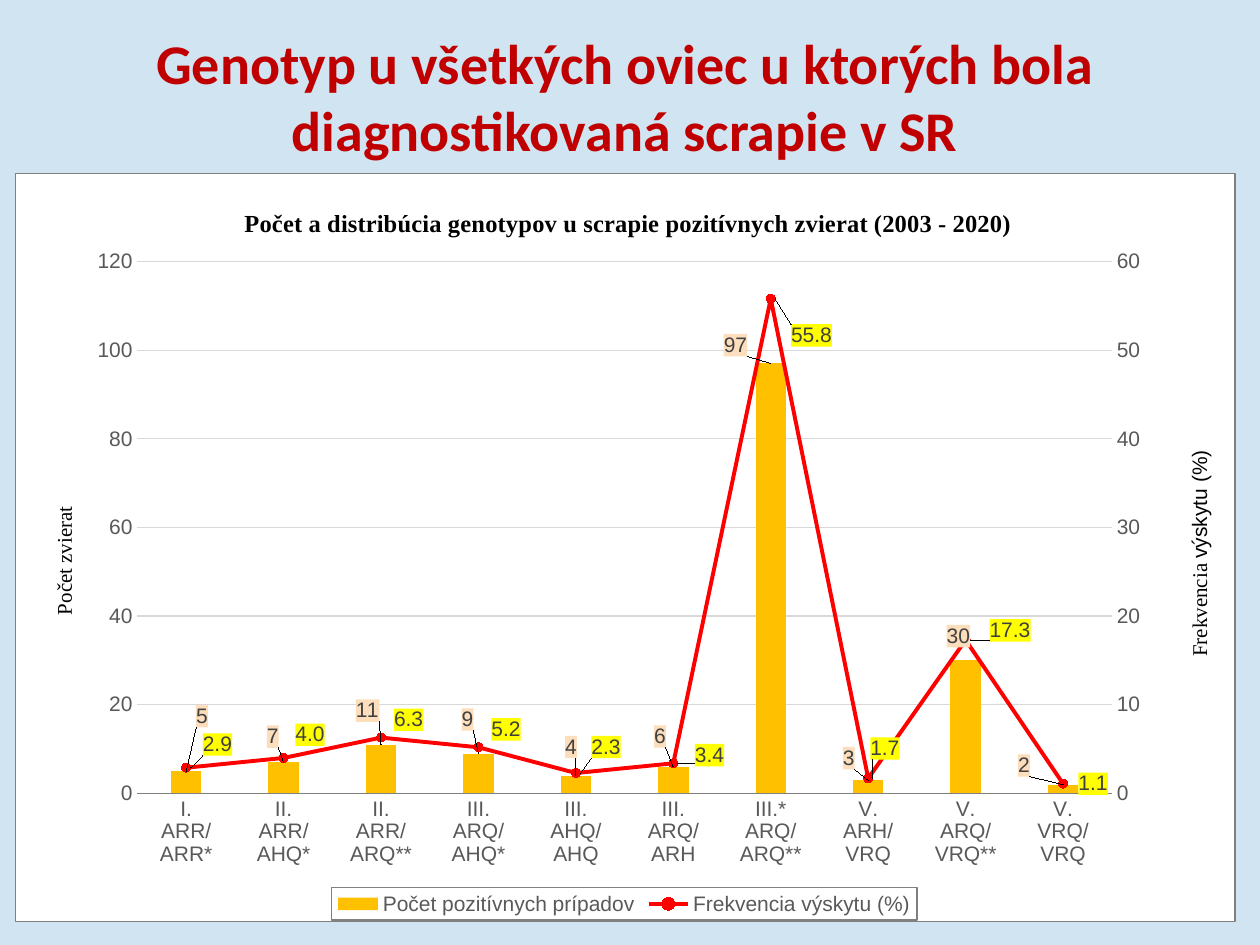
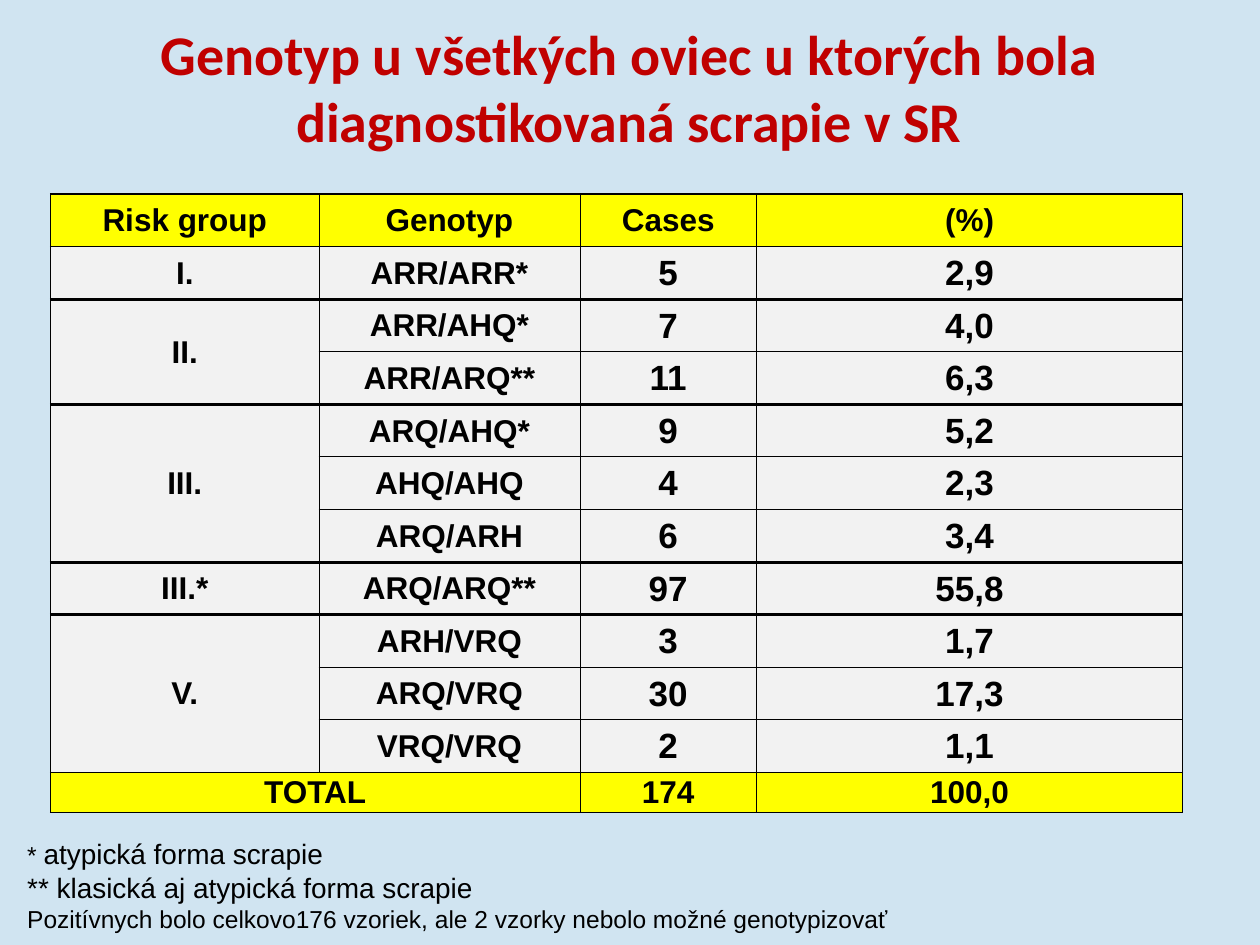
"""Build two slides on the genotypes of scrapie-positive sheep: a combined chart and a table."""
from copy import deepcopy

from lxml import etree
from pptx import Presentation
from pptx import util as u
from pptx.chart.data import CategoryChartData
from pptx.dml.color import RGBColor
from pptx.enum import chart as kinds, text
from pptx.oxml import parse_xml
from pptx.oxml.ns import nsdecls, qn

SANS, SERIF = "Arial", "Times New Roman"
BLACK, GREY, LABEL_GREY = "000000", "595959", "404040"
RED, YELLOW, ORANGE = "FF0000", "FFFF00", "FFC000"
TITLE = "Genotyp u všetkých oviec u ktorých bola diagnostikovaná scrapie v SR"
FRAME = ("<c:spPr %s><a:solidFill><a:srgbClr val='{}'/></a:solidFill>"
         "<a:ln w='9525'>{}</a:ln></c:spPr>" % nsdecls("c", "a"))
GREY_LINE = "<a:solidFill><a:srgbClr val='808080'/></a:solidFill>"
NO_LINE = "<a:noFill/>"


def style(font, size, colour, name=SANS, bold=False):
    """Give a font its size, colour, name and weight."""
    font.size, font.name, font.bold = u.Pt(size), name, bold
    font.color.rgb = RGBColor.from_string(colour)


def layout(**percents):
    """Return a manual chart layout from percentages of the chart area."""
    element = parse_xml("<c:layout %s><c:manualLayout/></c:layout>" % nsdecls("c"))
    for name, value in percents.items():
        etree.SubElement(element[0], qn("c:" + name)).set(
            "val", value if isinstance(value, str) else f"{value / 100:.4f}")
    return element


deck = Presentation()
deck.slide_width, deck.slide_height = u.Cm(25.4), u.Cm(19.05)
pages = []
for place in ((1.17, 0.33, 22.86, 3.18), (1.52, 0.25, 22.33, 3)):
    page = deck.slides.add_slide(deck.slide_layouts[5])
    page.background.fill.solid()
    page.background.fill.fore_color.rgb = RGBColor.from_string("D0E4F1")
    title = page.shapes.title
    title.left, title.top, title.width, title.height = map(u.Cm, place)
    title.text_frame.text = TITLE
    title.text_frame.vertical_anchor = text.MSO_ANCHOR.MIDDLE
    para = title.text_frame.paragraphs[0]
    para.alignment = text.PP_ALIGN.CENTER
    style(para.font, 32, "C00000", "Calibri", True)
    pages.append(page)
chart_page, table_page = pages

genotypes = [
    ("I.", "ARR/ARR*", 5, 2.9), ("II.", "ARR/AHQ*", 7, 4.0),
    ("II.", "ARR/ARQ**", 11, 6.3), ("III.", "ARQ/AHQ*", 9, 5.2),
    ("III.", "AHQ/AHQ", 4, 2.3), ("III.", "ARQ/ARH", 6, 3.4),
    ("III.*", "ARQ/ARQ**", 97, 55.8), ("V.", "ARH/VRQ", 3, 1.7),
    ("V.", "ARQ/VRQ", 30, 17.3), ("V.", "VRQ/VRQ", 2, 1.1),
]

data = CategoryChartData()
data.categories = [f"{group} {name}" + ("**" if (group, name) == ("V.", "ARQ/VRQ") else "")
                   for group, name, _, _ in genotypes]
data.add_series("Počet pozitívnych prípadov", [row[2] for row in genotypes])
data.add_series("Frekvencia výskytu (%)", [row[3] for row in genotypes])
chart = chart_page.shapes.add_chart(
    kinds.XL_CHART_TYPE.COLUMN_CLUSTERED, u.Cm(0.3), u.Cm(3.48), u.Cm(24.61), u.Cm(15.11), data).chart
root = chart.element
style(chart.font, 10, BLACK)
root.xpath("c:chart")[0].addnext(parse_xml(FRAME.format("FFFFFF", GREY_LINE)))

categories, values = chart.category_axis, chart.value_axis
for axis in (categories, values):
    axis.major_tick_mark = kinds.XL_TICK_MARK.NONE
    style(axis.tick_labels.font, 12, GREY)
categories.format.line.color.rgb = RGBColor.from_string("808080")
categories.format.line.width = u.Pt(0.75)
values.format.line.fill.background()
values.major_gridlines.format.line.color.rgb = RGBColor.from_string("D9D9D9")
values.major_gridlines.format.line.width = u.Pt(0.75)
values.minimum_scale, values.maximum_scale, values.major_unit = 0, 120, 20

for owner, words, size, bold in (
        (chart.chart_title, "Počet a distribúcia genotypov u scrapie pozitívnych zvierat (2003 - 2020)", 14, True),
        (values.axis_title, "Počet zvierat", 12, False)):
    span = owner.text_frame.paragraphs[0].add_run()
    span.text = words
    style(span.font, size, BLACK, SERIF, bold)
body = root.xpath(".//c:valAx/c:title//a:bodyPr")[0]
body.set("rot", "-5400000")
body.set("vert", "horz")

chart.has_legend = True
chart.legend.position = kinds.XL_LEGEND_POSITION.BOTTOM
chart.legend.include_in_layout = False
style(chart.legend.font, 12, GREY)
legend = root.xpath(".//c:legend")[0]
legend.xpath("c:txPr")[0].addprevious(parse_xml(FRAME.format("FFFFFF", GREY_LINE)))

bar_chart = root.xpath(".//c:barChart")[0]
line_chart = parse_xml(
    "<c:lineChart %s><c:grouping val='standard'/><c:varyColors val='0'/><c:marker val='1'/>"
    "<c:axId val='5001'/><c:axId val='5002'/></c:lineChart>" % nsdecls("c"))
bar_chart.addnext(line_chart)
line_series = bar_chart.xpath("c:ser")[1]
for flag in line_series.xpath("c:invertIfNegative"):
    line_series.remove(flag)
line_chart.insert(2, line_series)

category_element, value_element = root.xpath(".//c:catAx")[0], root.xpath(".//c:valAx")[0]
right_axis, hidden_axis = deepcopy(value_element), deepcopy(category_element)
value_element.addnext(right_axis)
right_axis.addnext(hidden_axis)
for element, settings in (
        (hidden_axis, {"axId": "5001", "crossAx": "5002", "delete": "1"}),
        (right_axis, {"axId": "5002", "crossAx": "5001", "axPos": "r", "crosses": "max",
                      "majorUnit": "10", "scaling/c:max": "60"})):
    for name, value in settings.items():
        element.xpath("c:" + name)[0].set("val", value)
right_axis.remove(right_axis.xpath("c:majorGridlines")[0])
first_run = right_axis.xpath(".//a:r")[0]
second_run = deepcopy(first_run)
first_run.addnext(second_run)
first_run.xpath("a:t")[0].text = "Frekvencia "
second_run.xpath("a:t")[0].text = "výskytu (%)"
second_run.xpath(".//a:latin")[0].set("typeface", SANS)

for old in root.xpath(".//c:layout"):
    old.getparent().remove(old)
root.xpath(".//c:plotArea")[0].insert(0, layout(
    layoutTarget="inner", xMode="edge", yMode="edge", x=10, y=11.8, w=79.9, h=71.1))
for anchor, x, y in (
        (root.xpath("c:chart/c:title/c:tx")[0], 18.4, 4),
        (value_element.xpath("c:title/c:tx")[0], 2.6, 44),
        (right_axis.xpath("c:title/c:tx")[0], 95.7, 36.5),
        (legend.xpath("c:legendPos")[0], 25.9, 95.7)):
    anchor.addnext(layout(xMode="edge", yMode="edge", x=x, y=y))

bars, line = chart.plots
bars.gap_width, bars.overlap = 219, -27
bars.vary_by_categories = False
cases, frequency = bars.series[0], line.series[0]
cases.format.fill.solid()
cases.format.fill.fore_color.rgb = RGBColor.from_string(ORANGE)
frequency.smooth = False
frequency.format.line.color.rgb = RGBColor.from_string(RED)
frequency.format.line.width = u.Pt(2.25)
marker = frequency.marker
marker.style, marker.size = kinds.XL_MARKER_STYLE.CIRCLE, 5
marker.format.fill.solid()
marker.format.fill.fore_color.rgb = RGBColor.from_string(RED)
marker.format.line.color.rgb = RGBColor.from_string(RED)

case_shifts = [(1.3, -5.2), (-0.9, -1.3), (-1.1, -2.4), (-0.9, -2.4), (-0.4, -1.7),
               (-1.1, -1.9), (-2.9, -0.3), (-1.6, -0.8), (-0.6, -1.1), (-3.2, -0.4)]
frequency_shifts = [(0.6, -3.1), (0.2, -3.1), (0.3, -2.4), (0.3, -2.4), (0.5, -3.5),
                    (1, -1.1), (0.9, 4.9), (-0.6, -4), (1.2, -1.3), (0.5, 0)]
for series, position, number_format, fill, shifts in (
        (cases, kinds.XL_LABEL_POSITION.OUTSIDE_END, "General", "FCDDBC", case_shifts),
        (frequency, kinds.XL_LABEL_POSITION.RIGHT, "0.0", YELLOW, frequency_shifts)):
    labels = series.data_labels
    labels.show_value = True
    labels.position = position
    labels.number_format, labels.number_format_is_linked = number_format, False
    style(labels.font, 12, LABEL_GREY)
    holder = series._element.xpath("c:dLbls")[0]
    holder.xpath("c:txPr")[0].addprevious(parse_xml(FRAME.format(fill, NO_LINE)))
    shared = [part for part in holder if part.tag != qn("c:showLeaderLines")]
    for index, (x, y) in enumerate(shifts):
        label = parse_xml("<c:dLbl %s><c:idx val='%d'/></c:dLbl>" % (nsdecls("c"), index))
        label.append(layout(x=x, y=y))
        label.extend(deepcopy(part) for part in shared)
        holder.insert(index, label)

rows = [("Risk group", "Genotyp", "Cases", "(%)")]
rows += [(group, name, str(count), f"{share:.1f}".replace(".", ","))
         for group, name, count, share in genotypes]
rows.append(("TOTAL", "", "174", "100,0"))
last = len(rows) - 1
table = table_page.shapes.add_table(
    len(rows), 4, u.Cm(1.02), u.Cm(3.91), u.Cm(22.82), u.Cm(12.47)).table
table.first_row = table.horz_banding = False
for column, width in zip(table.columns, (5.41, 5.26, 3.56, 8.59)):
    column.width = u.Cm(width)

edges = [1, 1] + [2 if rows[i - 1][0] != rows[i][0] else 0.5 for i in range(2, last)] + [1, 1]
for r, words in enumerate(rows):
    table.rows[r].height = u.Cm(0.81 if r == last else 1.06)
    for c, word in enumerate(words):
        cell = table.cell(r, c)
        repeated = c == 0 and r > 0 and word == rows[r - 1][0]
        cell.text = "" if repeated else word
        cell.vertical_anchor = text.MSO_ANCHOR.MIDDLE
        cell.margin_left = cell.margin_right = cell.margin_top = u.Cm(0.02)
        cell.margin_bottom = 0
        cell.fill.solid()
        cell.fill.fore_color.rgb = RGBColor.from_string(YELLOW if r in (0, last) else "F2F2F2")
        para = cell.text_frame.paragraphs[0]
        para.alignment = text.PP_ALIGN.CENTER
        style(para.font, 20 if c > 1 and 0 < r < last else 18, BLACK, bold=True)
        widths = {"L": 1 if c == 0 else 0.5, "R": 1 if c == 3 else 0.5,
                  "T": edges[r], "B": edges[r + 1]}
        for index, (side, width) in enumerate(widths.items()):
            cell._tc.get_or_add_tcPr().insert(index, parse_xml(
                "<a:ln%s %s w='%d'><a:solidFill><a:srgbClr val='%s'/></a:solidFill></a:ln%s>"
                % (side, nsdecls("a"), u.Pt(width), BLACK, side)))
for top, left, bottom, right in ((2, 0, 3, 0), (4, 0, 6, 0), (8, 0, 10, 0), (last, 0, last, 1)):
    table.cell(top, left).merge(table.cell(bottom, right))

box = table_page.shapes.add_textbox(u.Cm(0.3), u.Cm(16.74), u.Cm(23.06), u.Cm(2.31))
box.text_frame.word_wrap = True
notes = ([("* ", 14), ("atypická forma scrapie", 16)],
         [("** klasická aj atypická forma scrapie", 16)],
         [("Pozitívnych bolo celkovo176 vzoriek, ale 2 vzorky nebolo možné genotypizovať", 14)])
for index, note in enumerate(notes):
    para = box.text_frame.add_paragraph() if index else box.text_frame.paragraphs[0]
    for words, size in note:
        span = para.add_run()
        span.text = words
        style(span.font, size, BLACK)

deck.save("out.pptx")
